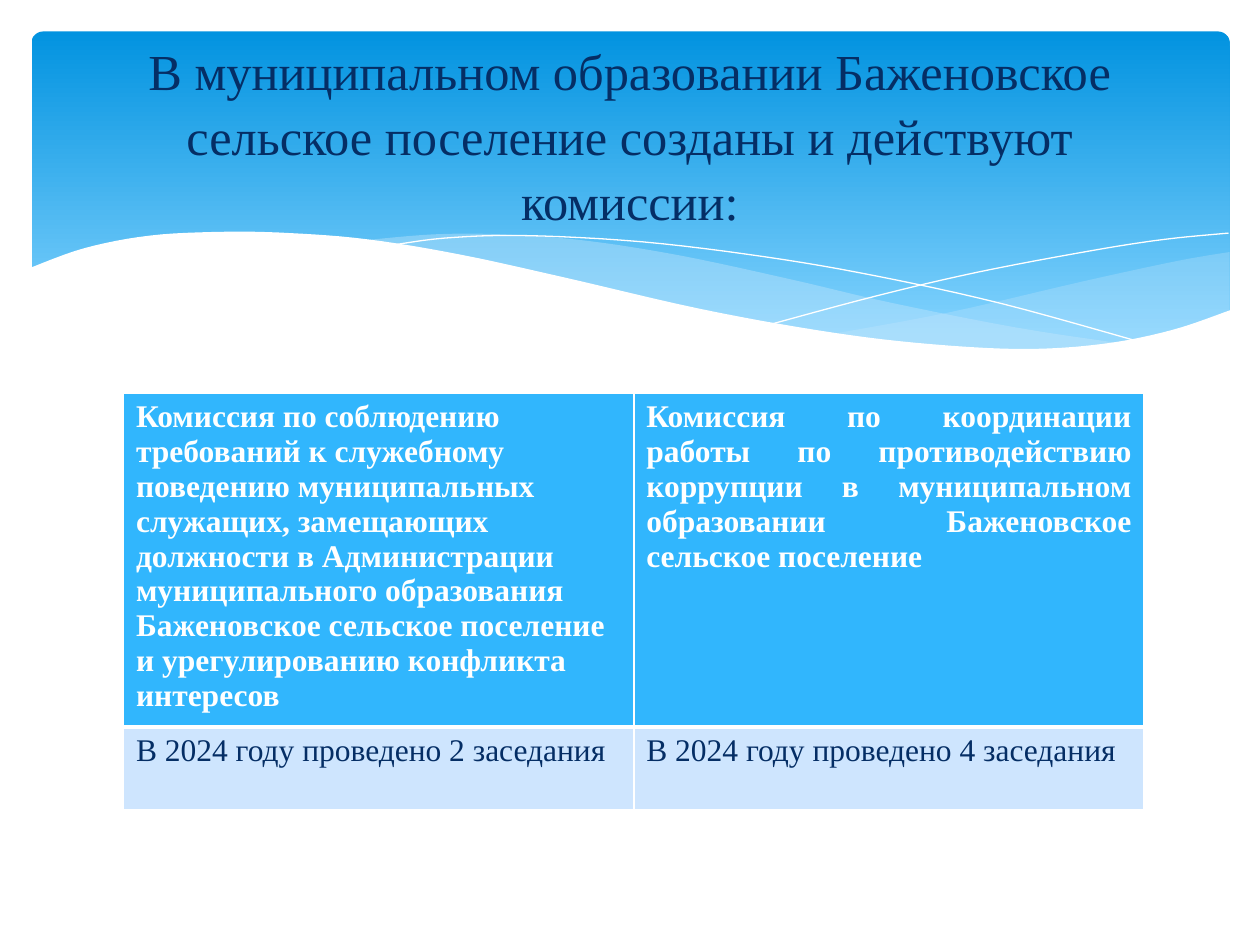
from lxml.etree import SubElement
from pptx import Presentation
from pptx.dml.color import RGBColor
from pptx.enum.shapes import MSO_SHAPE as Shape
from pptx.enum.text import MSO_ANCHOR as Anchor, PP_ALIGN as Align
from pptx.oxml import parse_xml
from pptx.oxml.ns import nsdecls, qn
from pptx.util import Inches, Pt

FONT = "Times New Roman"
WHITE, NAVY, SKY, PALE, MIST = "FFFFFF", "052E65", "31B6FD", "CEE5FE", "C6E7FC"
GRADIENT = ["0293E0", "83D3FE"]

TITLE = "В муниципальном образовании Баженовское сельское поселение созданы и действуют комиссии:"
ROWS = [
    ["Комиссия по соблюдению требований к служебному поведению муниципальных служащих, "
     "замещающих должности в Администрации муниципального образования Баженовское сельское "
     "поселение и урегулированию конфликта интересов",
     "Комиссия по координации работы по противодействию коррупции в муниципальном "
     "образовании Баженовское сельское поселение"],
    ["В 2024 году проведено 2 заседания", "В 2024 году проведено 4 заседания"],
]
ROW_HEIGHTS = [2.65, 0.66]
COLUMN_WIDTH = 4.05

# Each wave is a list of smooth edges, in inches; edges meet at corners.
RIGHT_WAVE = [
    [(9.76, 2), (9.35, 2.07), (8.61, 2.23), (7.53, 2.48), (6.61, 2.65)],
    [(6.61, 2.65), (7.32, 2.74), (8.03, 2.78), (8.72, 2.74), (9.28, 2.63), (9.76, 2.47)],
]
MIDDLE_WAVE = [
    [(8.93, 2.73), (8.07, 2.6), (7.06, 2.4), (6.29, 2.22), (5.41, 2.03), (4.65, 1.91),
     (3.99, 1.86), (3.44, 1.86), (2.86, 1.91)],
    [(2.86, 1.91), (3.62, 2.03), (4.49, 2.22), (5.66, 2.48), (6.5, 2.64), (7.22, 2.74),
     (7.96, 2.78), (8.48, 2.77), (8.93, 2.73)],
]
FALLING_LINE = [[(3.09, 1.95), (3.53, 1.89), (4.16, 1.87), (5.1, 1.92), (6.08, 2.04),
                 (6.95, 2.19), (7.95, 2.41), (9.07, 2.72)]]
RISING_LINE = [[(6.13, 2.57), (6.95, 2.35), (7.76, 2.16), (8.66, 1.99), (9.24, 1.9), (9.75, 1.85)]]
WHITE_WAVE = [
    [(9.77, 2.46), (9.3, 2.62), (8.75, 2.73), (8.09, 2.77), (7.26, 2.72), (6.48, 2.62),
     (5.55, 2.45), (4.47, 2.2), (3.65, 2.02), (2.92, 1.9), (2.3, 1.85), (1.77, 1.84),
     (1.19, 1.87), (0.67, 1.97), (0.23, 2.13)],
    [(0.23, 3.29), (9.77, 3.29)],
]


def color(value):
    return RGBColor.from_string(value)


def smooth_points(knots, steps=6):
    """Sample a Catmull-Rom curve through the knots."""
    padded = [knots[0], *knots, knots[-1]]
    points = [knots[0]]
    for a, b, c, d in zip(padded, padded[1:], padded[2:], padded[3:]):
        for step in range(1, steps + 1):
            t = step / steps
            points.append(tuple(
                q + t * (r - p) / 2 + t * t * (2 * p - 5 * q + 4 * r - s) / 2
                + t ** 3 * (3 * q - p - 3 * r + s) / 2
                for p, q, r, s in zip(a, b, c, d)))
    return points


def add_wave(slide, edges, fill=None, opacity=100):
    """Draw a filled wave, or a white hairline when there is no fill."""
    points = [(Inches(x), Inches(y)) for edge in edges for x, y in smooth_points(edge)]
    builder = slide.shapes.build_freeform(*points[0], scale=1.0)
    builder.add_line_segments(points[1:], close=fill is not None)
    shape = builder.convert_to_shape()
    shape.shadow.inherit = False
    if fill is None:
        shape.fill.background()
        shape.line.color.rgb = color(WHITE)
        shape.line.width = 0
        return
    shape.line.fill.background()
    shape.fill.solid()
    shape.fill.fore_color.rgb = color(fill)
    if opacity < 100:
        srgb = shape.fill._xPr.find(".//" + qn("a:srgbClr"))
        SubElement(srgb, qn("a:alpha"), val=str(opacity * 1000))


def add_banner(slide):
    banner = slide.shapes.add_shape(
        Shape.ROUNDED_RECTANGLE, Inches(0.25), Inches(0.25), Inches(9.51), Inches(2.7))
    banner.adjustments[0] = 0.034
    banner.shadow.inherit = False
    banner.line.fill.background()
    banner.fill.gradient()
    banner.fill.gradient_angle = 270
    for stop, value, position in zip(banner.fill.gradient_stops, GRADIENT, (0, 0.9)):
        stop.color.rgb = color(value)
        stop.position = position


def format_paragraph(paragraph, size, value, bold=False, align=Align.LEFT):
    paragraph.alignment = align
    for run in paragraph.runs:
        run.font.name = FONT
        run.font.size = Pt(size)
        run.font.bold = bold
        run.font.color.rgb = color(value)


def set_borders(cell, widths):
    """Give the cell white borders, widths in points by side."""
    properties = cell._tc.get_or_add_tcPr()
    for index, (side, width) in enumerate(widths.items()):
        properties.insert(index, parse_xml(
            f'<a:ln{side} {nsdecls("a")} w="{Pt(width)}"><a:solidFill>'
            f'<a:srgbClr val="{WHITE}"/></a:solidFill></a:ln{side}>'))


def add_commission_table(slide):
    columns = len(ROWS[0])
    table = slide.shapes.add_table(
        len(ROWS), columns, Inches(0.98), Inches(3.12),
        Inches(COLUMN_WIDTH * columns), Inches(sum(ROW_HEIGHTS))).table
    for row_index, texts in enumerate(ROWS):
        header = row_index == 0
        table.rows[row_index].height = Inches(ROW_HEIGHTS[row_index])
        for column_index, text in enumerate(texts):
            cell = table.cell(row_index, column_index)
            cell.text_frame.text = text
            cell.fill.solid()
            cell.fill.fore_color.rgb = color(SKY if header else PALE)
            justified = header and column_index == 1
            format_paragraph(cell.text_frame.paragraphs[0], 18, WHITE if header else NAVY,
                             header, Align.JUSTIFY if justified else Align.LEFT)
            set_borders(cell, {"L": 1, "R": 1, "T": 1 if header else 3, "B": 3 if header else 1})


def place_title(slide):
    title = slide.shapes.title
    title.left, title.top, title.width, title.height = map(Inches, (0.5, 0.37, 9, 1.37))
    frame = title.text_frame
    frame.text = TITLE
    frame.word_wrap = True
    frame.vertical_anchor = Anchor.MIDDLE
    paragraph = frame.paragraphs[0]
    paragraph.line_spacing = 1.08
    format_paragraph(paragraph, 28.8, NAVY, align=Align.CENTER)
    slide.shapes._spTree.append(title._element)  # in front of the banner


def main():
    presentation = Presentation()
    presentation.slide_width, presentation.slide_height = Inches(10), Inches(7.5)
    slide = presentation.slides.add_slide(presentation.slide_layouts[5])
    add_banner(slide)
    add_wave(slide, RIGHT_WAVE, MIST, 29)
    add_wave(slide, MIDDLE_WAVE, MIST, 40)
    add_wave(slide, FALLING_LINE)
    add_wave(slide, RISING_LINE)
    add_wave(slide, WHITE_WAVE, WHITE)
    add_commission_table(slide)
    place_title(slide)
    presentation.save("out.pptx")


if __name__ == "__main__":
    main()
